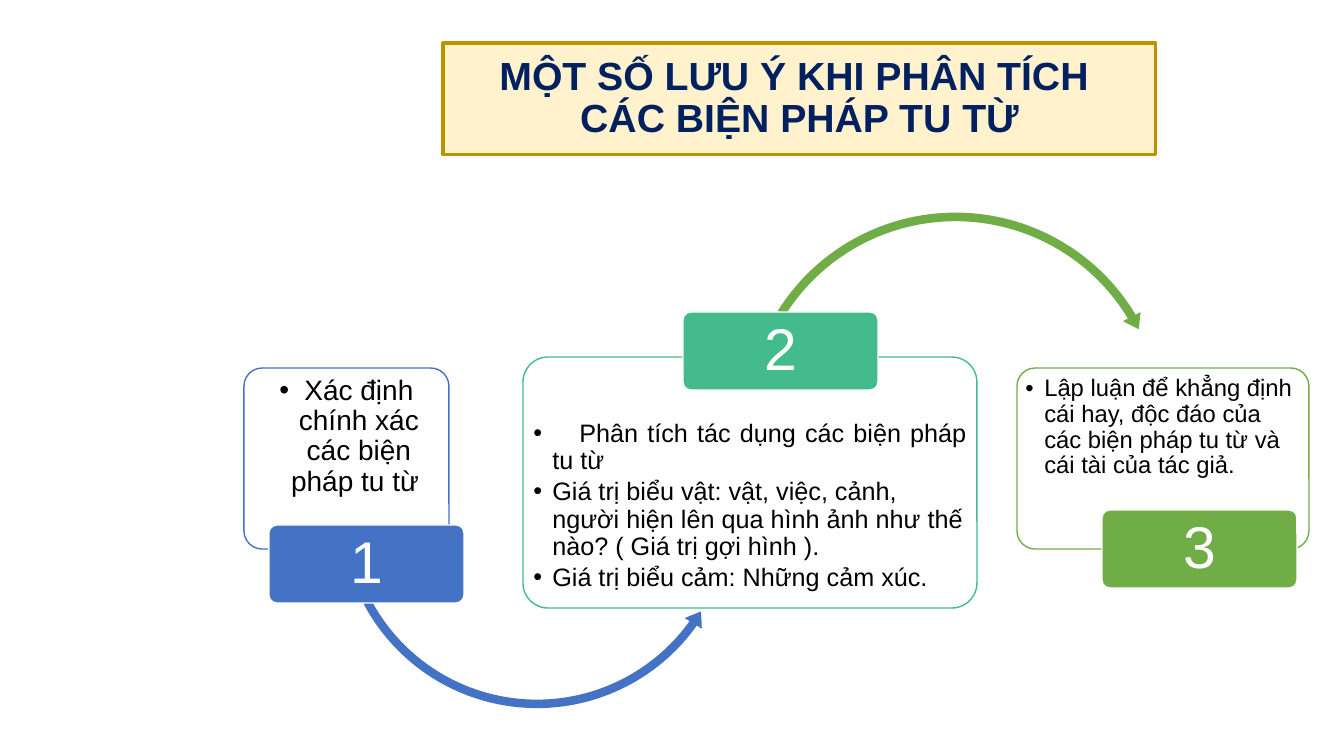
from lxml import etree
from pptx import Presentation
from pptx.dml.color import RGBColor
from pptx.enum.shapes import MSO_SHAPE
from pptx.enum.text import MSO_ANCHOR, PP_ALIGN
from pptx.oxml.ns import qn
from pptx.util import Pt

RECT, ROUND = MSO_SHAPE.RECTANGLE, MSO_SHAPE.ROUNDED_RECTANGLE
ARC, LEFT_ARC = MSO_SHAPE.CIRCULAR_ARROW, MSO_SHAPE.LEFT_CIRCULAR_ARROW
TOP, MIDDLE = MSO_ANCHOR.TOP, MSO_ANCHOR.MIDDLE
LEFT, CENTER, JUSTIFY = PP_ALIGN.LEFT, PP_ALIGN.CENTER, PP_ALIGN.JUSTIFY

COLORS = {"navy": "002060", "cream": "FFF2CC", "gold": "BF9000",
          "blue": "4472C4", "teal": "43BB8D", "green": "70AD47",
          "white": "FFFFFF", "black": "000000"}
PX = 914400 / 100.8  # EMU per px

prs = Presentation()
prs.slide_width, prs.slide_height = round(1344 * PX), round(756 * PX)
s = prs.slides.add_slide(prs.slide_layouts[6])


def add_box(kind, box, fill, line=None, weight=1, adjustments=()):
    sp = s.shapes.add_shape(kind, *[round(v * PX) for v in box])
    sp.shadow.inherit = False
    sp.fill.solid()
    sp.fill.fore_color.rgb = RGBColor.from_string(COLORS[fill])
    if line:
        sp.line.color.rgb = RGBColor.from_string(COLORS[line])
        sp.line.width = Pt(weight)
    else:
        sp.line.fill.background()
    for i, value in enumerate(adjustments):
        sp.adjustments[i] = value
    return sp


def add_text(sp, paragraphs, size, color, insets, anchor=MIDDLE, bold=False, indent=0):
    """Each paragraph is (text, alignment); an indent in px makes it a bullet."""
    tf = sp.text_frame
    tf.word_wrap = True
    tf.vertical_anchor = anchor
    tf.margin_left = tf.margin_right = round(insets[0] * PX)
    tf.margin_top, tf.margin_bottom = [round(v * PX) for v in insets[1:]]
    for i, (text, align) in enumerate(paragraphs):
        p = tf.add_paragraph() if i else tf.paragraphs[0]
        p.text = text
        if indent:
            pPr = p._p.get_or_add_pPr()
            pPr.set("marL", str(round(indent * PX)))
            pPr.set("indent", str(-round(indent * PX)))
            etree.SubElement(pPr, qn("a:buFont"), typeface="Arial")
            etree.SubElement(pPr, qn("a:buChar"), char="•")
            if text.startswith("\t"):
                tabs = etree.SubElement(pPr, qn("a:tabLst"))
                etree.SubElement(tabs, qn("a:tab"), pos=str(round(46 * PX)), algn="l")
            p.space_after = Pt(3)
        p.alignment = align
        p.line_spacing = 0.9
        for r in p.runs:
            r.font.name, r.font.size, r.font.bold = "Arial", Pt(size), bold
            r.font.color.rgb = RGBColor.from_string(COLORS[color])


# Title
title = add_box(RECT, (443, 43, 713, 112), "cream", "gold", 2.25)
add_text(title, [("MỘT SỐ LƯU Ý KHI PHÂN TÍCH \vCÁC BIỆN PHÁP TU TỪ", CENTER)],
         28, "navy", (10, 5, 5), bold=True)

# Steps: colour, card box, badge corner, text size, bullet indent, top inset, text, arrow
steps = [
    ("blue", (244, 368, 205, 181), (269, 525), 20, 25, 3,
     [("Xác định chính xác các biện pháp tu từ ", CENTER)],
     (LEFT_ARC, (335, 310, 404, 404), (0.021, 2.566, 21.287, 91.21, 0.025))),
    ("teal", (523, 357, 454, 251), (683, 312), 18, 19, 56,
     [("\tPhân tích tác dụng các biện pháp tu từ ", JUSTIFY),
      ("Giá trị biểu vật: vật, việc, cảnh, người hiện lên qua hình ảnh "
       "như thế nào? ( Giá trị gợi hình ).", LEFT),
      ("Giá trị biểu cảm: Những cảm xúc.", LEFT)],
     (ARC, (740, 207, 431, 431), (0.02, 2.401, 197.414, 127.325, 0.023))),
    ("green", (1017, 368, 292, 181), (1102, 510), 17, 19, 3,
     [("Lập luận để khẳng định cái hay, độc đáo của các biện pháp tu từ "
       "và cái tài của tác giả.", LEFT)], None),
]
arrow_colors = {"blue": "blue", "teal": "green"}

for number, (color, box, corner, size, indent, top, text, arrow) in enumerate(steps, 1):
    # Card
    card = add_box(ROUND, box, "white", color, adjustments=[0.1])
    fill_color = card.fill._xPr.find(qn("a:solidFill"))[0]
    etree.SubElement(fill_color, qn("a:alpha"), val="90000")
    add_text(card, text, size, "black", (3, top, 3), TOP, indent=indent)
    # Arrow to the next step
    if arrow:
        kind, arrow_box, adjustments = arrow
        add_box(kind, arrow_box, arrow_colors[color], adjustments=adjustments)
    # Number badge
    badge = add_box(ROUND, (*corner, 195, 78), color, "white", adjustments=[0.1])
    add_text(badge, [(str(number), CENTER)], 42, "white", (9, 6, 6))

prs.save("out.pptx")
